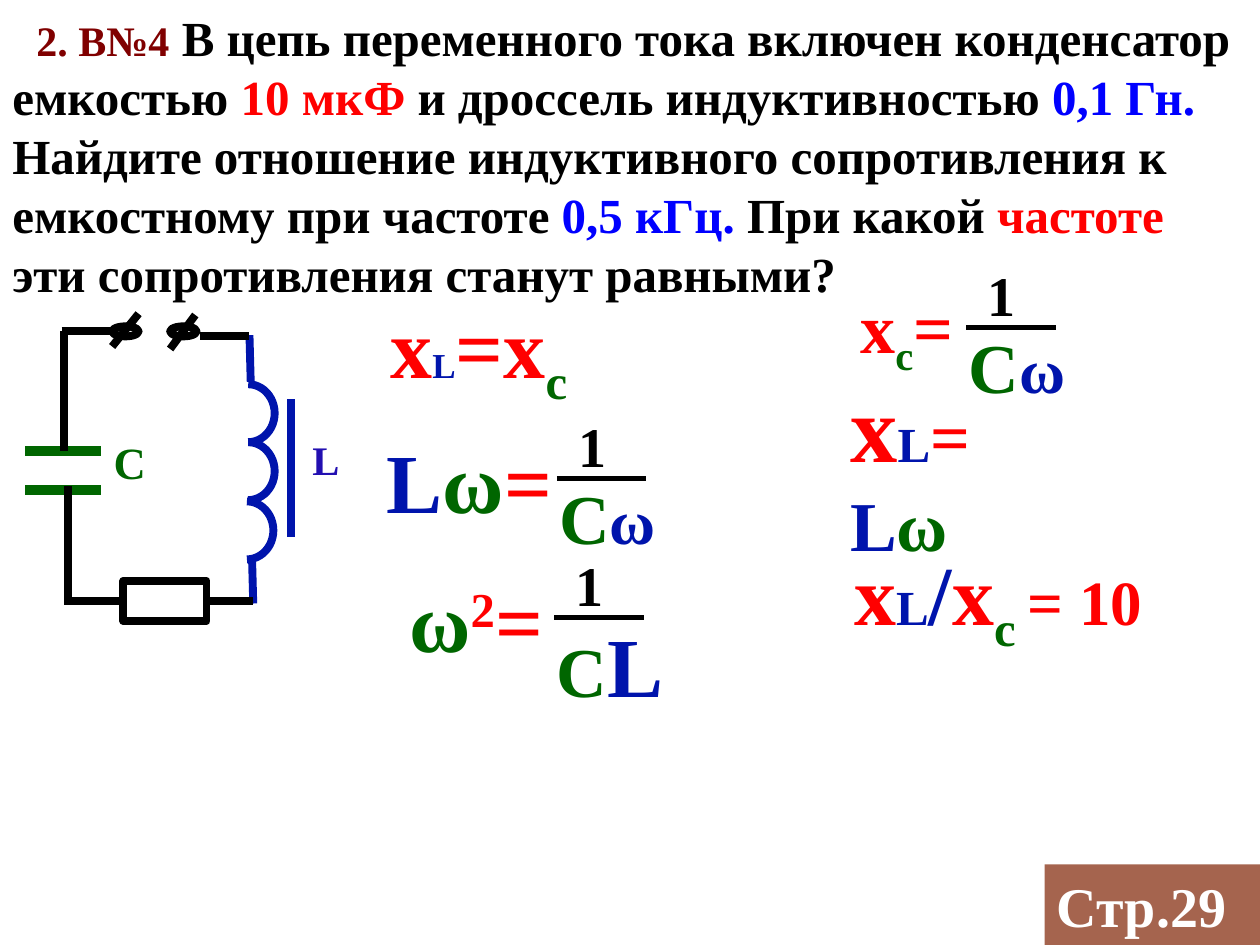
from dataclasses import dataclass
from math import cos, pi, sin

from lxml import etree
from pptx import Presentation
from pptx.dml.color import RGBColor
from pptx.enum.shapes import MSO_CONNECTOR, MSO_SHAPE
from pptx.enum.text import MSO_ANCHOR, PP_ALIGN
from pptx.oxml.ns import qn
from pptx.util import Inches, Pt

STRAIGHT = MSO_CONNECTOR.STRAIGHT
RECTANGLE, OVAL = MSO_SHAPE.RECTANGLE, MSO_SHAPE.OVAL
TOP, MIDDLE = MSO_ANCHOR.TOP, MSO_ANCHOR.MIDDLE
LEFT = PP_ALIGN.LEFT
LEFT_SIDE, RIGHT_SIDE = 1, 3

FONT = "Times New Roman"
BLACK = RGBColor(0x00, 0x00, 0x00)
WHITE = RGBColor(0xFF, 0xFF, 0xFF)
RED = RGBColor(0xFF, 0x00, 0x00)
BLUE = RGBColor(0x00, 0x00, 0xFF)
NAVY = RGBColor(0x00, 0x14, 0xAC)
INDIGO = RGBColor(0x22, 0x0F, 0xB1)
GREEN = RGBColor(0x00, 0x66, 0x00)
MAROON = RGBColor(0x80, 0x00, 0x00)
BROWN = RGBColor(0xA5, 0x64, 0x4E)


@dataclass(frozen=True)
class Span:
    text: str
    size: float
    color: RGBColor
    baseline: int = 0


@dataclass(frozen=True)
class Label:
    left: float
    top: float
    width: float
    height: float
    spans: tuple[Span, ...]
    anchor: int = MIDDLE
    wrap: bool = True
    indent: float = 0
    space_after: float = 0


@dataclass(frozen=True)
class Wire:
    x1: float
    y1: float
    x2: float
    y2: float
    color: RGBColor = BLACK
    width: float = 4.5


@dataclass(frozen=True)
class Fraction:
    left: float
    top: float
    denominator: tuple[Span, ...]


PROBLEM = Label(0, 0, 10, 2.46, (
    Span("2. В№4", 24, MAROON),
    Span(" В цепь переменного тока включен конденсатор емкостью ", 28, BLACK),
    Span("10 мкФ ", 28, RED),
    Span("и дроссель индуктивностью ", 28, BLACK),
    Span("0,1 Гн.", 28, BLUE),
    Span(" Найдите отношение индуктивного сопротивления к емкостному при частоте ", 28, BLACK),
    Span("0,5 кГц.", 28, BLUE),
    Span(" При какой ", 28, BLACK),
    Span("частоте", 28, RED),
    Span(" эти сопротивления станут равными?", 28, BLACK),
), indent=0.19)

FORMULAS = [
    Label(6.73, 2.2, 1.02, 0.78, (
        Span("x", 40, RED), Span("c", 40, GREEN, -25), Span("=", 40, RED),
    ), anchor=TOP, space_after=10),
    Label(6.65, 3.2, 1.8, 1.01, (
        Span("x", 54, RED), Span("L", 28, NAVY), Span("= ", 40, RED),
        Span("L", 40, NAVY), Span("ω", 40, GREEN),
    )),
    Label(6.68, 4.3, 2.55, 0.91, (
        Span("x", 48, RED), Span("L", 28, NAVY), Span("/", 48, NAVY), Span("x", 48, RED),
        Span("c ", 48, GREEN, -25), Span("= 10", 36, RED),
    ), wrap=False),
    Label(3, 2.34, 1.68, 0.91, (
        Span("x", 48, RED), Span("L", 20, NAVY), Span("=x", 48, RED), Span("c", 48, GREEN, -25),
    )),
    Label(2.97, 3.35, 2.42, 0.91, (
        Span("L", 48, NAVY), Span("ω", 48, GREEN), Span("=", 48, RED),
    )),
    Label(3.15, 4.46, 1.3, 0.91, (
        Span("ω", 48, GREEN), Span("2", 48, RED, 30), Span("=", 48, RED),
    )),
]

CIRCUIT_LABELS = [
    Label(2.38, 3.06, 0.45, 0.77, (Span("L", 40, INDIGO, -30),), wrap=False),
    Label(0.65, 3.02, 0.65, 0.84, (Span(" ", 44, GREEN), Span("C", 44, GREEN, -30)), wrap=False),
]

C_OMEGA = (Span("C", 40, GREEN), Span("ω", 36, NAVY))
C_L = (Span("C", 40, GREEN), Span("L", 48, NAVY))
FRACTIONS = [
    Fraction(7.74, 2.02, C_OMEGA),
    Fraction(4.49, 3.22, C_OMEGA),
    Fraction(4.47, 4.32, C_L),
]

WIRES = [
    Wire(0.8, 3.89, 0.2, 3.89, GREEN, 6),
    Wire(0.8, 3.58, 0.2, 3.58, GREEN, 6),
    Wire(0.51, 3.58, 0.51, 2.63),
    Wire(0.54, 4.8, 0.54, 3.86),
    Wire(2.31, 3.17, 2.31, 4.26, NAVY),
    Wire(2, 4.42, 2.01, 4.79, NAVY),
    Wire(1.98, 2.66, 1.99, 3.03, NAVY),
    Wire(1.59, 2.67, 1.98, 2.67),
    Wire(0.49, 2.63, 0.88, 2.63),
    Wire(1.35, 2.77, 1.55, 2.5),
    Wire(0.89, 2.75, 1.1, 2.49),
]
TERMINAL_LEFTS = (0.89, 1.35)
COIL_CENTERS = ((1.97, 3.28), (1.97, 3.74), (1.96, 4.21))
COIL_RADIUS_X, COIL_RADIUS_Y, COIL_STEPS = 0.21, 0.23, 24


def fill_text(shape, label: Label) -> None:
    frame = shape.text_frame
    frame.word_wrap = label.wrap
    frame.vertical_anchor = label.anchor
    paragraph = frame.paragraphs[0]
    paragraph.alignment = LEFT
    paragraph.space_after = Pt(label.space_after)
    if label.indent:
        properties = paragraph._p.get_or_add_pPr()
        properties.set("marL", "0")
        properties.set("indent", str(Inches(label.indent)))
    for span in label.spans:
        run = paragraph.add_run()
        run.text = span.text
        run.font.name = FONT
        run.font.size = Pt(span.size)
        run.font.bold = True
        run.font.color.rgb = span.color
        if span.baseline:
            run._r.get_or_add_rPr().set("baseline", str(span.baseline * 1000))


def add_label(slide, label: Label) -> None:
    box = slide.shapes.add_textbox(
        Inches(label.left), Inches(label.top), Inches(label.width), Inches(label.height))
    fill_text(box, label)


def add_wire(slide, wire: Wire):
    connector = slide.shapes.add_connector(
        STRAIGHT, Inches(wire.x1), Inches(wire.y1), Inches(wire.x2), Inches(wire.y2))
    connector.line.color.rgb = wire.color
    connector.line.width = Pt(wire.width)
    etree.SubElement(connector._element.spPr, qn("a:effectLst"))
    return connector


def add_fraction(slide, fraction: Fraction) -> None:
    left, top = fraction.left, fraction.top
    add_label(slide, Label(left, top, 0.48, 0.63, (Span("1", 32, BLACK),), TOP, space_after=10))
    add_label(slide, Label(left - 0.15, top + 0.5, 1.19, 0.73, fraction.denominator, TOP,
                           space_after=10))
    add_wire(slide, Wire(left - 0.07, top + 0.58, left + 0.64, top + 0.58, width=3))


def style_outline(shape, color: RGBColor) -> None:
    shape.shadow.inherit = False
    shape.fill.background()
    shape.line.color.rgb = color
    shape.line.width = Pt(4.5)


def add_outline(slide, kind: int, left: float, top: float, width: float, height: float):
    shape = slide.shapes.add_shape(kind, Inches(left), Inches(top), Inches(width), Inches(height))
    style_outline(shape, BLACK)
    return shape


def add_coil_turn(slide, center_x: float, center_y: float) -> None:
    angles = [pi / 2 - pi * step / COIL_STEPS for step in range(COIL_STEPS + 1)]
    points = [(Inches(center_x + COIL_RADIUS_X * cos(angle)),
               Inches(center_y + COIL_RADIUS_Y * sin(angle))) for angle in angles]
    builder = slide.shapes.build_freeform(*points[0])
    builder.add_line_segments(points[1:], close=False)
    style_outline(builder.convert_to_shape(), NAVY)


def add_circuit(slide) -> None:
    for wire in WIRES:
        add_wire(slide, wire)
    for center in COIL_CENTERS:
        add_coil_turn(slide, *center)
    for left in TERMINAL_LEFTS:
        add_outline(slide, OVAL, left, 2.59, 0.21, 0.08)
    resistor = add_outline(slide, RECTANGLE, 0.98, 4.61, 0.66, 0.32)
    add_wire(slide, Wire(0.55, 4.77, 0.98, 4.77)).end_connect(resistor, LEFT_SIDE)
    add_wire(slide, Wire(1.64, 4.77, 2.01, 4.77)).begin_connect(resistor, RIGHT_SIDE)


def add_page_badge(slide) -> None:
    label = Label(8.29, 6.86, 1.71, 0.64, (Span("Стр.29", 32, WHITE),))
    badge = slide.shapes.add_shape(
        RECTANGLE, Inches(label.left), Inches(label.top), Inches(label.width), Inches(label.height))
    badge.shadow.inherit = False
    badge.fill.solid()
    badge.fill.fore_color.rgb = BROWN
    badge.line.fill.background()
    fill_text(badge, label)


def main() -> None:
    presentation = Presentation()
    presentation.slide_width, presentation.slide_height = Inches(10), Inches(7.5)
    slide = presentation.slides.add_slide(presentation.slide_layouts[6])
    add_label(slide, PROBLEM)
    add_circuit(slide)
    for label in FORMULAS + CIRCUIT_LABELS:
        add_label(slide, label)
    for fraction in FRACTIONS:
        add_fraction(slide, fraction)
    add_page_badge(slide)
    presentation.save("out.pptx")


if __name__ == "__main__":
    main()
